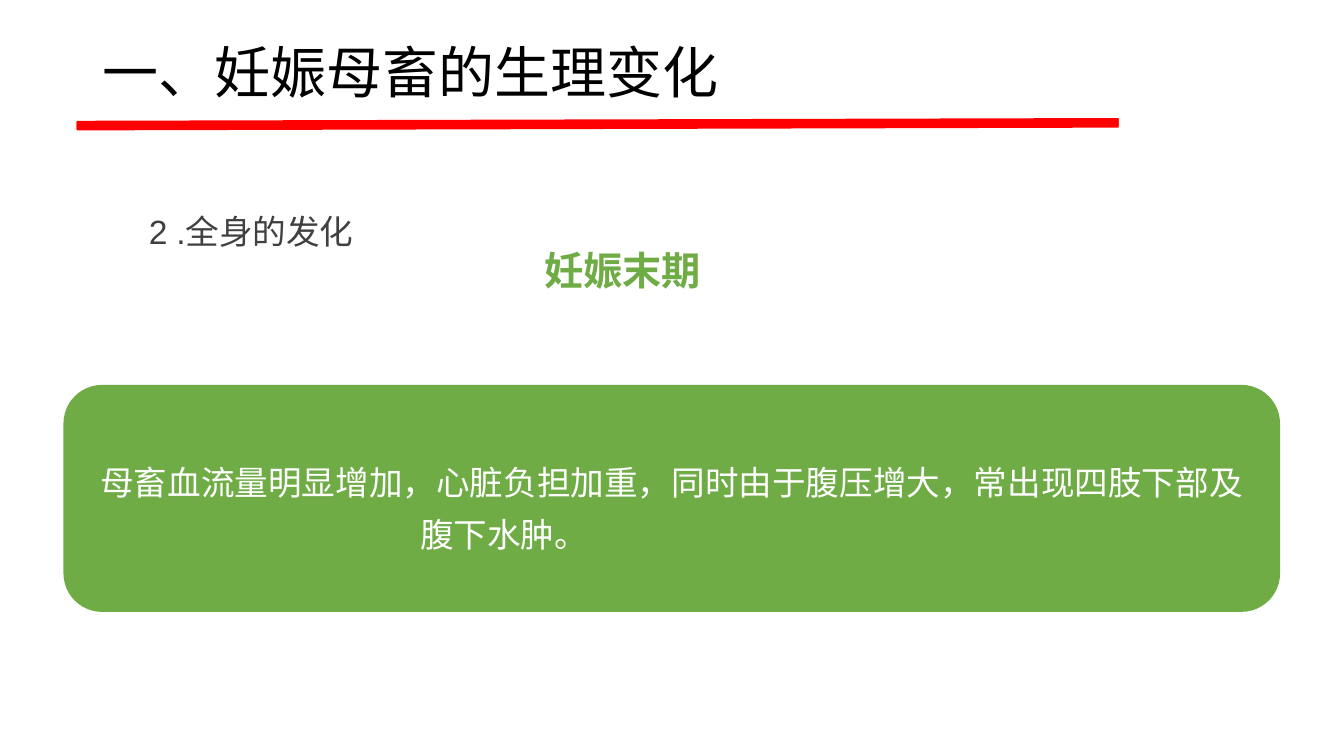
import dataclasses

import pptx
import pptx.dml.color
import pptx.enum.shapes
import pptx.enum.text
import pptx.oxml.ns
import pptx.util
from lxml import etree
from pptx.util import Cm


@dataclasses.dataclass(frozen=True)
class Theme:
    """Colours, fonts and type sizes of the slide."""
    black: str = "000000"
    grey: str = "404040"
    white: str = "FFFFFF"
    red: str = "FF0000"
    green: str = "6FAC46"
    latin: str = "Arial"
    chinese: str = "Noto Sans CJK SC"
    title: int = 40
    stage: int = 28
    body: int = 24
    rule: int = 6


THEME = Theme()
QN = pptx.oxml.ns.qn


def rgb(value):
    """Turn a hex string into a colour."""
    return pptx.dml.color.RGBColor.from_string(value)


def add_text(page, box, text, size, colour, latin=THEME.chinese, bold=False,
             tracking=0, inset=0, middle=False):
    """Place one paragraph of text in a box and return the paragraph."""
    shape = page.shapes.add_textbox(*(Cm(length) for length in box))
    frame = shape.text_frame
    frame.word_wrap = True
    if middle:
        frame.vertical_anchor = pptx.enum.text.MSO_ANCHOR.MIDDLE
    frame.margin_left = frame.margin_right = Cm(inset)
    frame.margin_top = frame.margin_bottom = Cm(inset)
    para = frame.paragraphs[0]
    para.text = text
    para.font.name = latin
    para.font.size = pptx.util.Pt(size)
    para.font.bold = bold
    para.font.color.rgb = rgb(colour)
    defaults = para._p.get_or_add_pPr().find(QN("a:defRPr"))
    defaults.set("spc", str(tracking))
    east_asian = etree.Element(QN("a:ea"), typeface=THEME.chinese)
    defaults.find(QN("a:latin")).addnext(east_asian)
    return para


def add_header(page, left, top, width, height):
    """Place the title above a doubled red rule."""
    for offset in (0, 0.03):
        rule = page.shapes.add_connector(
            pptx.enum.shapes.MSO_CONNECTOR.STRAIGHT,
            Cm(left), Cm(top + height + offset),
            Cm(left + width), Cm(top + height + offset - 0.07))
        rule.line.color.rgb = rgb(THEME.red)
        rule.line.width = pptx.util.Pt(THEME.rule)
        etree.SubElement(rule._element.spPr, QN("a:effectLst"))
    title = add_text(page, (left + 0.41, top, 29.21, 3.68),
                     "一、妊娠母畜的生理变化", THEME.title, THEME.black,
                     inset=0.25, middle=True)
    title.line_spacing = 0.9


def add_headings(page, left, top):
    """Place the section heading and the stage of pregnancy."""
    add_text(page, (left, top, 8.08, 1.07), "2 .全身的发化", THEME.body,
             THEME.grey, latin=THEME.latin, tracking=-10)
    add_text(page, (left + 9.98, top + 0.89, 6.55, 1.22), "妊娠末期",
             THEME.stage, THEME.green, bold=True, tracking=-10)


def add_panel(page, left, top, width, height):
    """Place the green rounded panel with its statement."""
    panel = page.shapes.add_shape(
        pptx.enum.shapes.MSO_SHAPE.ROUNDED_RECTANGLE,
        Cm(left), Cm(top), Cm(width), Cm(height))
    panel.adjustments[0] = 0.17
    panel.shadow.inherit = False
    panel.fill.solid()
    panel.fill.fore_color.rgb = rgb(THEME.green)
    panel.line.fill.background()
    statement = add_text(
        page, (left + 0.91, top + 1.63, 28.86, 2.57),
        "母畜血流量明显增加，心脏负担加重，同时由于腹压增大，常出现四肢下部及腹下水肿。",
        THEME.body, THEME.white)
    statement.line_spacing = 1.3
    properties = statement._p.get_or_add_pPr()
    properties.set("marL", str(Cm(8.08)))
    properties.set("indent", str(Cm(-8.06)))


def main():
    """Build and save the deck."""
    deck = pptx.Presentation()
    deck.slide_width, deck.slide_height = Cm(33.87), Cm(19.05)
    page = deck.slides.add_slide(deck.slide_layouts[6])
    add_header(page, 1.93, 0.05, 26.26, 3.1)
    add_headings(page, 3.75, 5.31)
    add_panel(page, 1.6, 9.7, 30.66, 5.72)
    deck.save("out.pptx")


if __name__ == "__main__":
    main()
